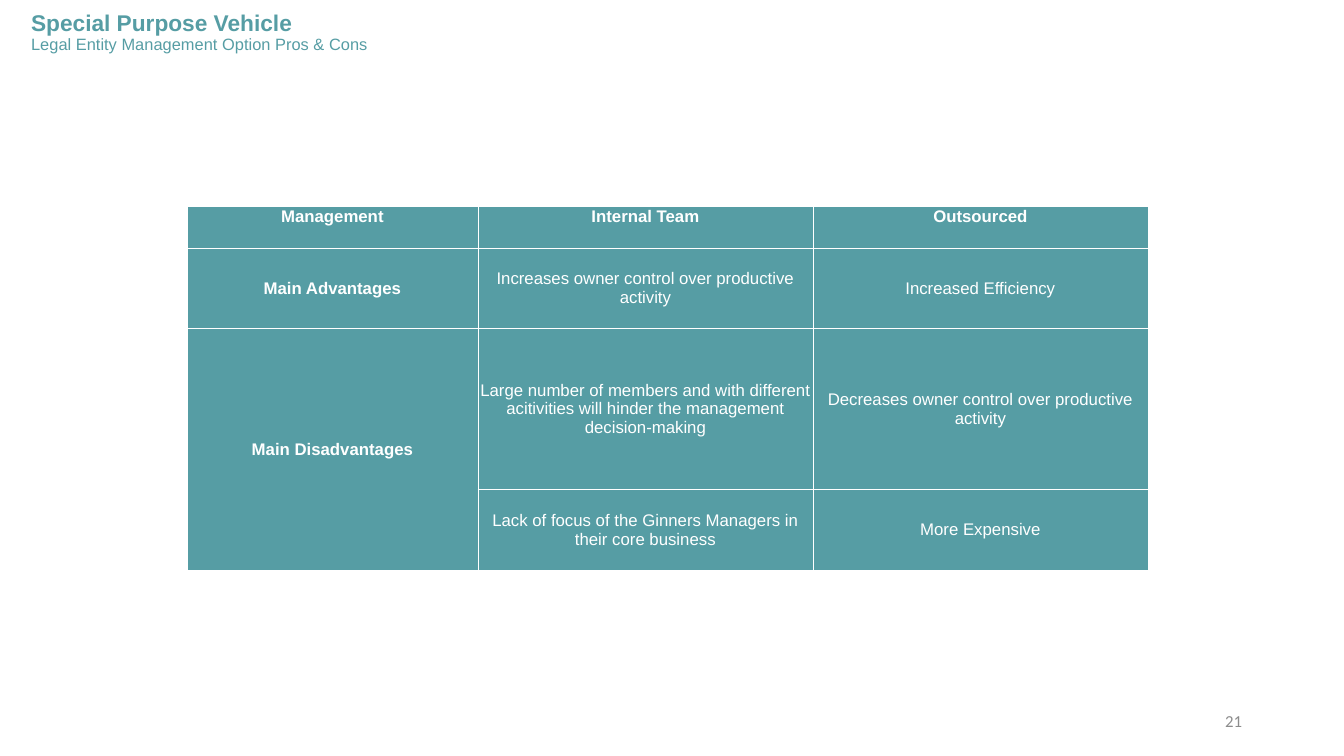
from typing import NamedTuple

from lxml import etree
from pptx import Presentation
from pptx.dml.color import RGBColor
from pptx.enum.text import MSO_ANCHOR, MSO_AUTO_SIZE, PP_ALIGN
from pptx.oxml.ns import qn
from pptx.util import Emu, Pt

TOP, MIDDLE = MSO_ANCHOR.TOP, MSO_ANCHOR.MIDDLE
LEFT, CENTER, RIGHT = PP_ALIGN.LEFT, PP_ALIGN.CENTER, PP_ALIGN.RIGHT
NO_AUTOFIT = MSO_AUTO_SIZE.NONE

TEAL = RGBColor(0x56, 0x9D, 0xA4)
WHITE = RGBColor(0xFF, 0xFF, 0xFF)
GRAY = RGBColor(0x8C, 0x8C, 0x8C)

EMU_PER_PX = 914400 / 100.8
TITLE_ONLY_LAYOUT = 5
COLUMN_WIDTHS = (291, 335, 335)


class OptionRow(NamedTuple):
    height: int
    label: str
    internal_team: str
    outsourced: str


OPTION_ROWS = (
    OptionRow(42, "Management", "Internal Team", "Outsourced"),
    OptionRow(80, "Main Advantages",
              "Increases owner control over productive activity",
              "Increased Efficiency"),
    OptionRow(161, "Main Disadvantages",
              "Large number of members and with different acitivities "
              "will hinder the management decision-making",
              "Decreases owner control over productive activity"),
    OptionRow(81, "",
              "Lack of focus of the Ginners Managers in their core business",
              "More Expensive"),
)


def px(length: int) -> Emu:
    return Emu(round(length * EMU_PER_PX))


def format_font(font, name: str, size: float, color: RGBColor, bold: bool) -> None:
    font.name = name
    font.size = Pt(size)
    font.bold = bold
    font.color.rgb = color


def add_title(slide) -> None:
    title = slide.shapes.title
    title.left, title.top, title.width, title.height = map(px, (21, 8, 832, 49))
    frame = title.text_frame
    frame.auto_size = NO_AUTOFIT
    frame.vertical_anchor = MIDDLE
    paragraph = frame.paragraphs[0]
    paragraph.alignment = LEFT
    paragraph.line_spacing = 0.9
    heading = paragraph.add_run()
    heading.text = "Special Purpose Vehicle"
    format_font(heading.font, "Arial", 16.2, TEAL, True)
    paragraph.add_line_break()
    subtitle = paragraph.add_run()
    subtitle.text = "Legal Entity Management Option Pros & Cons"
    format_font(subtitle.font, "Arial", 11.7, TEAL, False)


def set_borders(cell, color: RGBColor, width: float) -> None:
    properties = cell._tc.get_or_add_tcPr()
    for position, side in enumerate(("a:lnL", "a:lnR", "a:lnT", "a:lnB")):
        line = etree.Element(qn(side), w=str(Pt(width)))
        fill = etree.SubElement(line, qn("a:solidFill"))
        etree.SubElement(fill, qn("a:srgbClr"), val=str(color))
        properties.insert(position, line)


def fill_cell(cell, text: str, bold: bool, anchor: MSO_ANCHOR) -> None:
    cell.fill.solid()
    cell.fill.fore_color.rgb = TEAL
    set_borders(cell, WHITE, 0.5)
    cell.margin_left = cell.margin_right = cell.margin_top = px(1)
    cell.margin_bottom = 0
    cell.vertical_anchor = anchor
    paragraph = cell.text_frame.paragraphs[0]
    paragraph.text = text
    paragraph.alignment = CENTER
    format_font(paragraph.font, "Arial", 12, WHITE, bold)


def add_option_table(slide) -> None:
    width = sum(COLUMN_WIDTHS)
    height = sum(row.height for row in OPTION_ROWS)
    table = slide.shapes.add_table(
        len(OPTION_ROWS), len(COLUMN_WIDTHS),
        px(187), px(206), px(width), px(height)).table
    for column, column_width in zip(table.columns, COLUMN_WIDTHS):
        column.width = px(column_width)
    for row_index, option in enumerate(OPTION_ROWS):
        table.rows[row_index].height = px(option.height)
        is_header = row_index == 0
        texts = (option.label, option.internal_team, option.outsourced)
        for column_index, text in enumerate(texts):
            fill_cell(table.cell(row_index, column_index), text,
                      is_header or column_index == 0,
                      TOP if is_header else MIDDLE)
    table.cell(2, 0).merge(table.cell(3, 0))


def add_slide_number(slide) -> None:
    box = slide.shapes.add_textbox(px(950), px(701), px(302), px(40))
    frame = box.text_frame
    frame.word_wrap = True
    frame.vertical_anchor = MIDDLE
    paragraph = frame.paragraphs[0]
    paragraph.text = "21"
    paragraph.alignment = RIGHT
    format_font(paragraph.font, "Calibri", 12, GRAY, False)


def main() -> None:
    presentation = Presentation()
    presentation.slide_width = px(1344)
    presentation.slide_height = px(756)
    layout = presentation.slide_layouts[TITLE_ONLY_LAYOUT]
    slide = presentation.slides.add_slide(layout)
    add_title(slide)
    add_option_table(slide)
    add_slide_number(slide)
    presentation.save("out.pptx")


if __name__ == "__main__":
    main()
